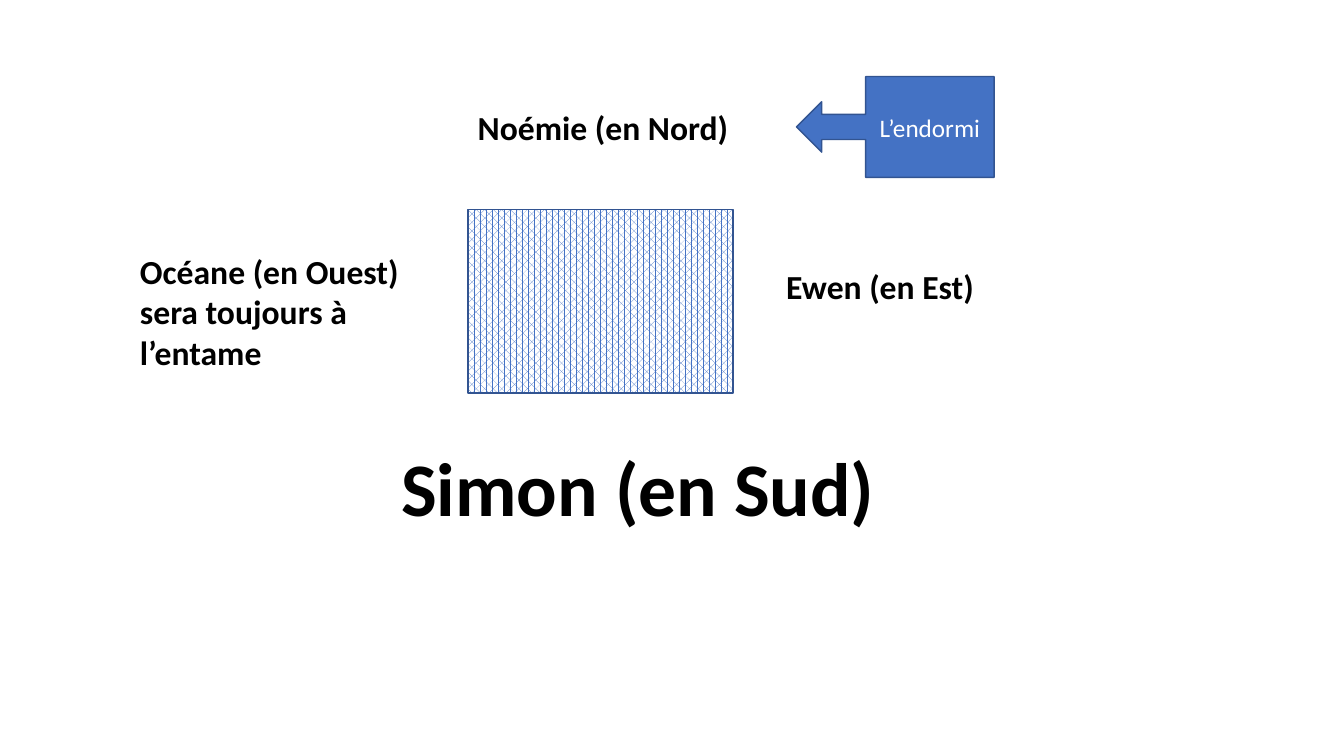
from pptx import Presentation
from pptx.dml.color import RGBColor
from pptx.enum.dml import MSO_PATTERN
from pptx.enum.shapes import MSO_SHAPE
from pptx.enum.text import MSO_ANCHOR, PP_ALIGN
from pptx.util import Inches, Pt

RECT = MSO_SHAPE.RECTANGLE
CALLOUT = MSO_SHAPE.LEFT_ARROW_CALLOUT
DOTS = MSO_PATTERN.PERCENT_60
MIDDLE = MSO_ANCHOR.MIDDLE
CENTER = PP_ALIGN.CENTER


def rgb(color):
    return RGBColor.from_string(color)


class Board:
    FONT = "Calibri"
    BLUE, OUTLINE, WHITE, BLACK = "4472C4", "325491", "FFFFFF", "000000"

    def __init__(self, slide):
        self.s = slide

    def run(self, p, text, size, color, bold=False):
        r = p.add_run()
        r.text = text
        r.font.name = self.FONT
        r.font.size = Pt(size)
        r.font.bold = bold
        r.font.color.rgb = rgb(color)

    def label(self, box, lines, size=24):
        tb = self.s.shapes.add_textbox(*map(Inches, box))
        tf = tb.text_frame
        tf.word_wrap = True
        for i, line in enumerate(lines):
            p = tf.add_paragraph() if i else tf.paragraphs[0]
            self.run(p, line, size, self.BLACK, bold=True)

    def shape(self, kind, box):
        sp = self.s.shapes.add_shape(kind, *map(Inches, box))
        sp.shadow.inherit = False
        sp.line.color.rgb = rgb(self.OUTLINE)
        sp.line.width = Pt(1)
        return sp

    def table_top(self, box):
        fill = self.shape(RECT, box).fill
        fill.patterned()
        fill.pattern = DOTS
        fill.fore_color.rgb = rgb(self.BLUE)
        fill.back_color.rgb = rgb(self.WHITE)

    def callout(self, box, text, size=18):
        sp = self.shape(CALLOUT, box)
        sp.fill.solid()
        sp.fill.fore_color.rgb = rgb(self.BLUE)
        tf = sp.text_frame
        tf.word_wrap = True
        tf.vertical_anchor = MIDDLE
        p = tf.paragraphs[0]
        p.alignment = CENTER
        self.run(p, text, size, self.WHITE)


def main():
    prs = Presentation()
    prs.slide_width, prs.slide_height = Inches(13.33), Inches(7.5)
    board = Board(prs.slides.add_slide(prs.slide_layouts[6]))

    # Card table
    board.table_top((4.64, 2.08, 2.63, 1.82))

    # Players around the table
    board.label((3.88, 4.32, 6.06, 1.01), ["Simon (en Sud)"], size=54)
    board.label((7.7, 2.59, 3.06, 0.5), ["Ewen (en Est)"])
    board.label((4.64, 1.01, 3.06, 0.5), ["Noémie (en Nord)"])
    board.label((1.29, 2.44, 3.06, 1.31),
                ["Océane (en Ouest)", "sera toujours à l’entame"])

    # Callout pointing at the dummy
    board.callout((7.9, 0.76, 1.96, 1), "L’endormi")

    prs.save("out.pptx")


if __name__ == "__main__":
    main()
